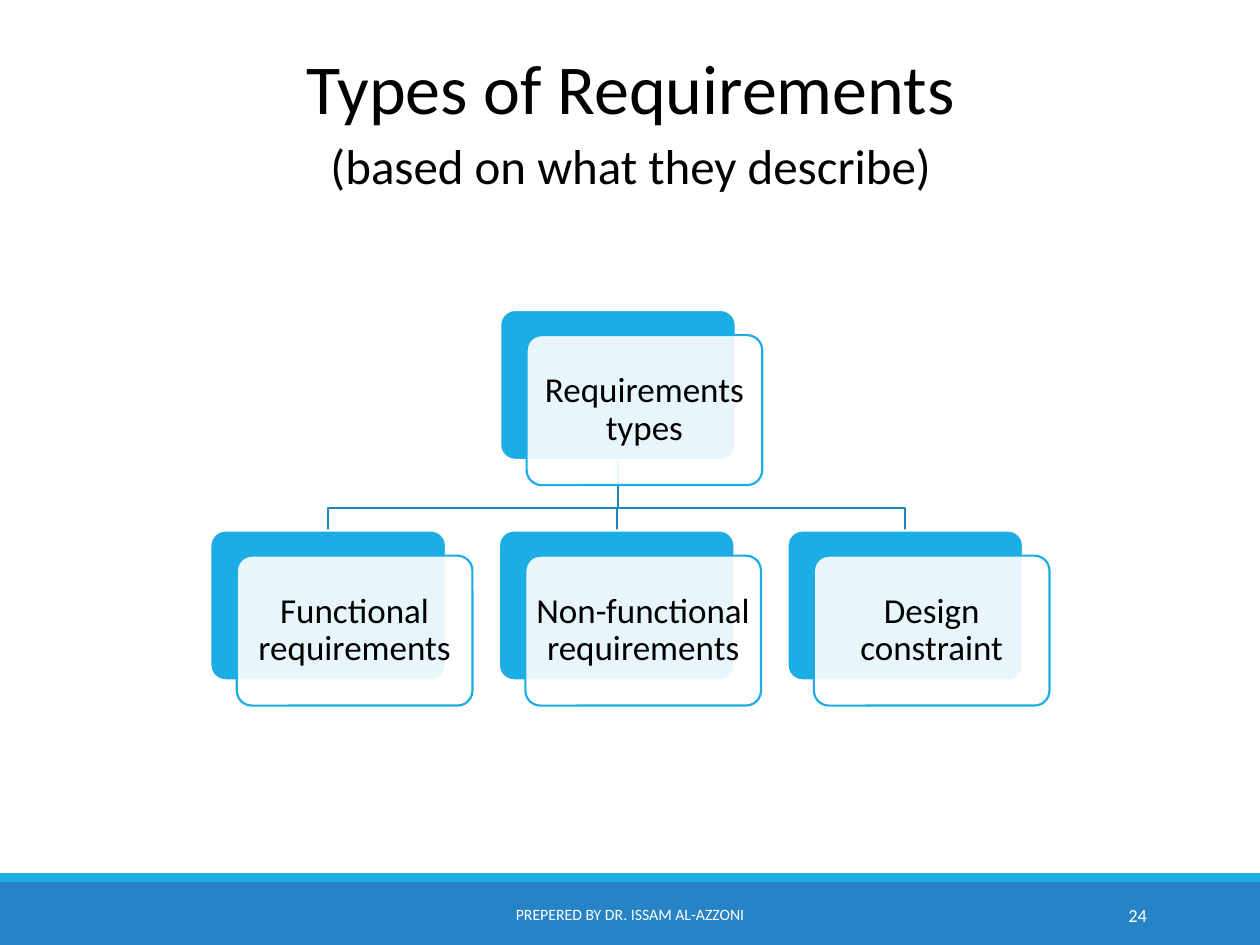
from dataclasses import dataclass

from lxml import etree
from pptx import Presentation
from pptx.dml.color import RGBColor
from pptx.enum import shapes, text
from pptx.oxml import ns
from pptx.util import Inches, Pt


@dataclass(frozen=True)
class Theme:
    """Colours, font and type sizes of the slide."""
    font: str = "Calibri"
    ink: str = "000000"
    white: str = "FFFFFF"
    accent: str = "1CADE4"
    band: str = "2683C6"
    branch: str = "168BB7"
    title: float = 40
    subtitle: float = 28
    card: float = 20
    footer: float = 9
    number: float = 10.5
    line: float = 1.25


THEME = Theme()
CARD_SIZE = (1.87, 1.19)
OFFSET_X, OFFSET_Y = 0.21, 0.2
ROOT_SHIFT = 0.01
BEND_SHARE = 0.68


def style_runs(paragraph, size, colour):
    """Set the font of every run in a paragraph."""
    for run in paragraph.runs:
        run.font.name = THEME.font
        run.font.size = Pt(size)
        run.font.color.rgb = RGBColor.from_string(colour)


def set_margins(frame, margin):
    """Give a text frame the same margin on all four sides."""
    frame.margin_left = frame.margin_right = Inches(margin)
    frame.margin_top = frame.margin_bottom = Inches(margin)


def add_block(slide, box, fill, outline=None, preset=shapes.MSO_SHAPE.RECTANGLE):
    """Add a filled shape with an optional outline."""
    block = slide.shapes.add_shape(preset, *map(Inches, box))
    block.shadow.inherit = False
    block.fill.solid()
    block.fill.fore_color.rgb = RGBColor.from_string(fill)
    if outline:
        block.line.color.rgb = RGBColor.from_string(outline)
        block.line.width = Pt(THEME.line)
    else:
        block.line.fill.background()
    return block


def add_title(slide, box, heading, subheading):
    """Place the two-line title in its box."""
    title = slide.shapes.title
    title.left, title.top, title.width, title.height = map(Inches, box)
    frame = title.text_frame
    frame.text = f"{heading}\v{subheading}"
    frame.auto_size = text.MSO_AUTO_SIZE.NONE
    frame.vertical_anchor = text.MSO_ANCHOR.TOP
    set_margins(frame, 0)
    paragraph = frame.paragraphs[0]
    paragraph.alignment = text.PP_ALIGN.CENTER
    paragraph.line_spacing = Pt(37.6)
    paragraph.space_before = Pt(1.9)
    style_runs(paragraph, THEME.title, THEME.ink)
    paragraph.runs[-1].font.size = Pt(THEME.subtitle)


def add_card(slide, left, top, label):
    """Place a solid card with a translucent labelled card in front."""
    rounded = shapes.MSO_SHAPE.ROUNDED_RECTANGLE
    back = add_block(slide, (left, top, *CARD_SIZE), THEME.accent, THEME.white, rounded)
    front_box = (left + OFFSET_X, top + OFFSET_Y, *CARD_SIZE)
    front = add_block(slide, front_box, THEME.white, THEME.accent, rounded)
    back.adjustments[0] = front.adjustments[0] = 0.1
    colour = front.fill._xPr.find(ns.qn("a:solidFill"))[0]
    etree.SubElement(colour, ns.qn("a:alpha"), val="90000")
    frame = front.text_frame
    frame.text = label
    frame.word_wrap = True
    frame.vertical_anchor = text.MSO_ANCHOR.MIDDLE
    set_margins(frame, 0.04)
    paragraph = frame.paragraphs[0]
    paragraph.alignment = text.PP_ALIGN.CENTER
    paragraph.line_spacing = 0.9
    style_runs(paragraph, THEME.card, THEME.ink)


def add_branch(slide, start, end):
    """Draw an elbow line from a parent card down to a child card."""
    bend = start[1] + (end[1] - start[1]) * BEND_SHARE
    route = [start, (start[0], bend), (end[0], bend), end]
    origin, *corners = [(Inches(x), Inches(y)) for x, y in route]
    builder = slide.shapes.build_freeform(*origin)
    builder.add_line_segments(corners, close=False)
    branch = builder.convert_to_shape()
    branch.shadow.inherit = False
    branch.fill.background()
    branch.line.color.rgb = RGBColor.from_string(THEME.branch)
    branch.line.width = Pt(THEME.line)


def add_hierarchy(slide, box, root, children):
    """Place the root card above an evenly spaced row of child cards."""
    left, top, width, height = box
    card_width, card_height = CARD_SIZE
    span = width - card_width - OFFSET_X
    step = span / (len(children) - 1)
    child_lefts = [left + index * step for index in range(len(children))]
    child_top = top + height - card_height - OFFSET_Y
    root_left = left + span / 2 + ROOT_SHIFT
    root_foot = (root_left + card_width / 2, top + card_height)
    for child_left in child_lefts:
        add_branch(slide, root_foot, (child_left + card_width / 2, child_top))
    add_card(slide, root_left, top, root)
    for child_left, label in zip(child_lefts, children):
        add_card(slide, child_left, child_top, label)


def add_footer_text(slide, box, words, size, alignment):
    """Place one line of white text on the footer band."""
    frame = slide.shapes.add_textbox(*map(Inches, box)).text_frame
    frame.text = words
    frame.word_wrap = True
    frame.vertical_anchor = text.MSO_ANCHOR.MIDDLE
    frame.paragraphs[0].alignment = alignment
    style_runs(frame.paragraphs[0], size, THEME.white)


def add_footer(slide, box, credit, number):
    """Place the footer band, its accent strip, the credit and the page number."""
    left, top, width, height = box
    strip = 0.07
    add_block(slide, (left, top + strip, width, height - strip), THEME.band)
    add_block(slide, (left, top, width, strip), THEME.accent)
    text_top = top + 0.13
    add_footer_text(slide, (left + 3.02, text_top, 3.96, 0.4), credit,
                    THEME.footer, text.PP_ALIGN.CENTER)
    add_footer_text(slide, (left + 8.12, text_top, 1.08, 0.4), number,
                    THEME.number, text.PP_ALIGN.RIGHT)


def main():
    """Build and save the slide."""
    deck = Presentation()
    deck.slide_width, deck.slide_height = Inches(10), Inches(7.5)
    slide = deck.slides.add_slide(deck.slide_layouts.get_by_name("Title Only"))
    add_footer(slide, (0, 6.93, 10, 0.57), "PREPERED BY DR. ISSAM AL-AZZONI", "24")
    add_title(slide, (0.59, 0.5, 8.83, 1.2),
              "Types of Requirements", "(based on what they describe)")
    add_hierarchy(slide, (1.67, 2.46, 6.66, 3.14), "Requirements types",
                  ["Functional requirements", "Non-functional requirements",
                   "Design constraint"])
    deck.save("out.pptx")


if __name__ == "__main__":
    main()
